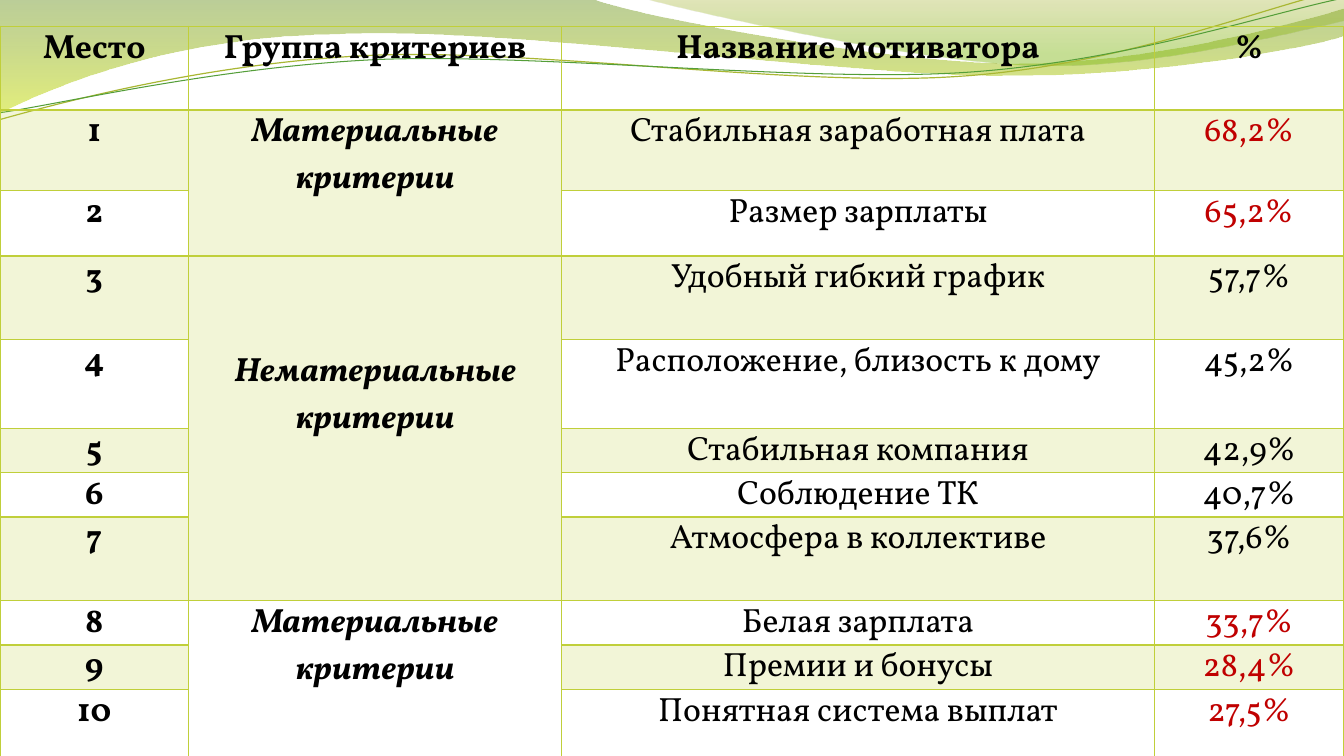
import math
from dataclasses import dataclass

from pptx import Presentation
from pptx import util as u
from pptx.dml import color
from pptx.enum import text
from pptx.oxml import ns
from lxml import etree

# The slide is a grid of 13.33 columns by 7.5 rows; one step is one inch.
COLUMNS, ROWS = 13.33, 7.5
TABLE_TOP = 0.26
COLUMN_WIDTHS = (1.87, 3.7, 5.88, 1.88)
HEADER_HEIGHT = 0.83
SLIM_ROW = 0.44
SLIM_SPACING = 0.94
FONT = "Vollkorn"
COLORS = {
    "lime": "C0CF3A", "black": "000000", "red": "C00000",
    "moss": "69921C", "lemon": "CCE10F", "olive": "9BAA1A", "leaf": "81BA16",
    "thin_lime": "A9B733", "thin_green": "549E39",
}
HEADERS = ("Место", "Группа критериев", "Название мотиватора", "%")
Point = tuple[float, float]


@dataclass(frozen=True)
class Stop:
    position: float
    color: str
    alpha: int


@dataclass(frozen=True)
class Wave:
    """Starts at the first point; each entry is a line end (1 point) or a curve (3)."""
    start: Point
    segments: tuple[tuple[Point, ...], ...]
    stops: tuple[Stop, ...] = ()
    line: str = ""
    width: float = 0
    tilt: float = 0


@dataclass(frozen=True)
class Motivator:
    name: str
    share: str
    height: float
    material: bool = False


@dataclass(frozen=True)
class Group:
    name: str
    first: int
    last: int
    top: float = 0


WAVES = (
    Wave((0, 0), (
        ((5.87, -0.01),),
        ((6.34, 0.17), (8.84, 0.63), (10.11, 0.63)),
        ((11.37, 0.63), (12.77, 0.26), (13.33, 0.09)),
        ((13.34, 0.36),),
        ((13.11, 0.44), (11.59, 0.76), (9.94, 0.75)),
        ((8.29, 0.75), (5.09, 0.28), (3.43, 0.34)),
        ((1.72, 0.36), (0.61, 0.83), (-0.02, 1.13)),
        ((0, 0),),
    ), stops=(Stop(0, "moss", 45), Stop(1, "lemon", 55))),
    Wave((6.38, -0.01), (
        ((6.79, 0.11), (9.09, 0.62), (10.25, 0.65)),
        ((11.4, 0.69), (12.82, 0.32), (13.33, 0.21)),
        ((13.33, 0),),
        ((6.38, -0.01),),
    ), stops=(Stop(0, "olive", 30), Stop(0.8, "leaf", 45))),
    Wave((-0.01, 1.19), (
        ((0.63, 1.01), (2.1, 0.62), (3.69, 0.55)),
        ((5.27, 0.48), (7.89, 0.87), (9.49, 0.76)),
        ((11.1, 0.66), (12.51, 0.08), (13.3, -0.1)),
    ), line="thin_lime", width=0.85, tilt=-2.7),
    Wave((-0.01, 1.12), (
        ((0.62, 1.03), (2.18, 0.66), (3.77, 0.59)),
        ((5.37, 0.53), (7.96, 0.82), (9.55, 0.72)),
        ((11.14, 0.62), (12.55, 0.14), (13.33, -0.02)),
    ), line="thin_green", width=0.75, tilt=-2.7),
)
PIVOT = (6.66, 0.57)
MOTIVATORS = (
    Motivator("Стабильная заработная плата", "68,2%", 0.8, True),
    Motivator("Размер зарплаты", "65,2%", 0.65, True),
    Motivator("Удобный гибкий график", "57,7%", 0.83),
    Motivator("Расположение, близость к дому", "45,2%", 0.88),
    Motivator("Стабильная компания", "42,9%", SLIM_ROW),
    Motivator("Соблюдение ТК", "40,7%", SLIM_ROW),
    Motivator("Атмосфера в коллективе", "37,6%", 0.83),
    Motivator("Белая зарплата", "33,7%", SLIM_ROW, True),
    Motivator("Премии и бонусы", "28,4%", SLIM_ROW, True),
    Motivator("Понятная система выплат", "27,5%", 0.83, True),
)
GROUPS = (
    Group("Материальные критерии", 1, 2),
    Group("Нематериальные критерии", 3, 7, top=0.93),
    Group("Материальные критерии", 8, 10),
)


def rgb(name: str) -> color.RGBColor:
    return color.RGBColor.from_string(COLORS[name])


def set_alpha(parent, percent: int) -> None:
    """Make the colour element inside parent partly transparent."""
    swatch = parent.find(".//" + ns.qn("a:srgbClr"))
    etree.SubElement(swatch, ns.qn("a:alpha"), val=str(percent * 1000))


def level(point: Point, tilt: float) -> Point:
    """Return the place in EMU that the point has before the shape is tilted."""
    angle = math.radians(-tilt)
    x, y = point[0] - PIVOT[0], point[1] - PIVOT[1]
    return (u.Inches(PIVOT[0] + x * math.cos(angle) - y * math.sin(angle)),
            u.Inches(PIVOT[1] + x * math.sin(angle) + y * math.cos(angle)))


def draw_wave(page, wave: Wave) -> None:
    start = level(wave.start, wave.tilt)
    segments = [[level(point, wave.tilt) for point in segment] for segment in wave.segments]
    builder = page.shapes.build_freeform(*start)
    builder.add_line_segments([segment[-1] for segment in segments], close=bool(wave.stops))
    shape = builder.convert_to_shape()
    lines = list(shape.element.iter(ns.qn("a:lnTo")))
    for line, segment in zip(lines, segments):
        if len(segment) == 3:
            curve = etree.Element(ns.qn("a:cubicBezTo"))
            for x, y in segment:
                etree.SubElement(curve, ns.qn("a:pt"), x=str(x - shape.left), y=str(y - shape.top))
            line.getparent().replace(line, curve)
    shape.rotation = wave.tilt
    shape.shadow.inherit = False
    if wave.stops:
        shape.line.fill.background()
        shape.fill.gradient()
        shape.fill.gradient_angle = 270
        elements = list(shape.element.iter(ns.qn("a:gs")))
        for target, stop, element in zip(shape.fill.gradient_stops, wave.stops, elements):
            target.position = stop.position
            target.color.rgb = rgb(stop.color)
            set_alpha(element, stop.alpha)
    else:
        shape.fill.background()
        shape.line.color.rgb = rgb(wave.line)
        shape.line.width = u.Pt(wave.width)


def set_borders(cell, top: float, bottom: float) -> None:
    properties = cell._tc.get_or_add_tcPr()
    widths = {"lnL": 1, "lnR": 1, "lnT": top, "lnB": bottom}
    for index, (side, width) in enumerate(widths.items()):
        border = etree.Element(ns.qn("a:" + side), w=str(u.Pt(width)))
        fill = etree.SubElement(border, ns.qn("a:solidFill"))
        etree.SubElement(fill, ns.qn("a:srgbClr"), val=COLORS["lime"])
        properties.insert(index, border)


def write(cell, words: str, tint: str = "black", bold: bool = False, italic: bool = False) -> None:
    para = cell.text_frame.paragraphs[0]
    para.alignment = text.PP_ALIGN.CENTER
    span = para.add_run()
    span.text = words
    formats = {"name": FONT, "size": u.Pt(24), "bold": bold, "italic": italic}
    for key, value in formats.items():
        setattr(span.font, key, value)
    span.font.color.rgb = rgb(tint)


def draw_table(page) -> None:
    heights = [HEADER_HEIGHT] + [item.height for item in MOTIVATORS]
    frame = page.shapes.add_table(len(heights), len(COLUMN_WIDTHS), 0, u.Inches(TABLE_TOP),
                                  u.Inches(COLUMNS), u.Inches(sum(heights)))
    table = frame.table
    table.first_row = table.horz_banding = False
    for column, width in zip(table.columns, COLUMN_WIDTHS):
        column.width = u.Inches(width)
    margins = {"margin_left": 0.07, "margin_right": 0.07, "margin_top": 0, "margin_bottom": 0}
    for number, height in enumerate(heights):
        table.rows[number].height = u.Inches(height)
        for column, cell in enumerate(table.rows[number].cells):
            for key, value in margins.items():
                setattr(cell, key, u.Inches(value))
            if height == SLIM_ROW and column != 1:
                cell.text_frame.paragraphs[0].line_spacing = SLIM_SPACING
            if number % 2:
                cell.fill.solid()
                cell.fill.fore_color.rgb = rgb("lime")
                set_alpha(cell._tc.tcPr, 20)
            else:
                cell.fill.background()
            set_borders(cell, 2 if number == 1 else 1, 2 if number == 0 else 1)
    for column, header in enumerate(HEADERS):
        write(table.cell(0, column), header, bold=True)
    for place, item in enumerate(MOTIVATORS, 1):
        write(table.cell(place, 0), str(place), bold=True)
        write(table.cell(place, 2), item.name)
        write(table.cell(place, 3), item.share, "red" if item.material else "black")
    for group in GROUPS:
        cell = table.cell(group.first, 1)
        cell.merge(table.cell(group.last, 1))
        cell.margin_top = u.Inches(group.top)
        write(cell, group.name, bold=True, italic=True)


def main() -> None:
    deck = Presentation()
    deck.slide_width, deck.slide_height = u.Inches(COLUMNS), u.Inches(ROWS)
    page = deck.slides.add_slide(deck.slide_layouts[6])
    for wave in WAVES:
        draw_wave(page, wave)
    draw_table(page)
    deck.save("out.pptx")


if __name__ == "__main__":
    main()
